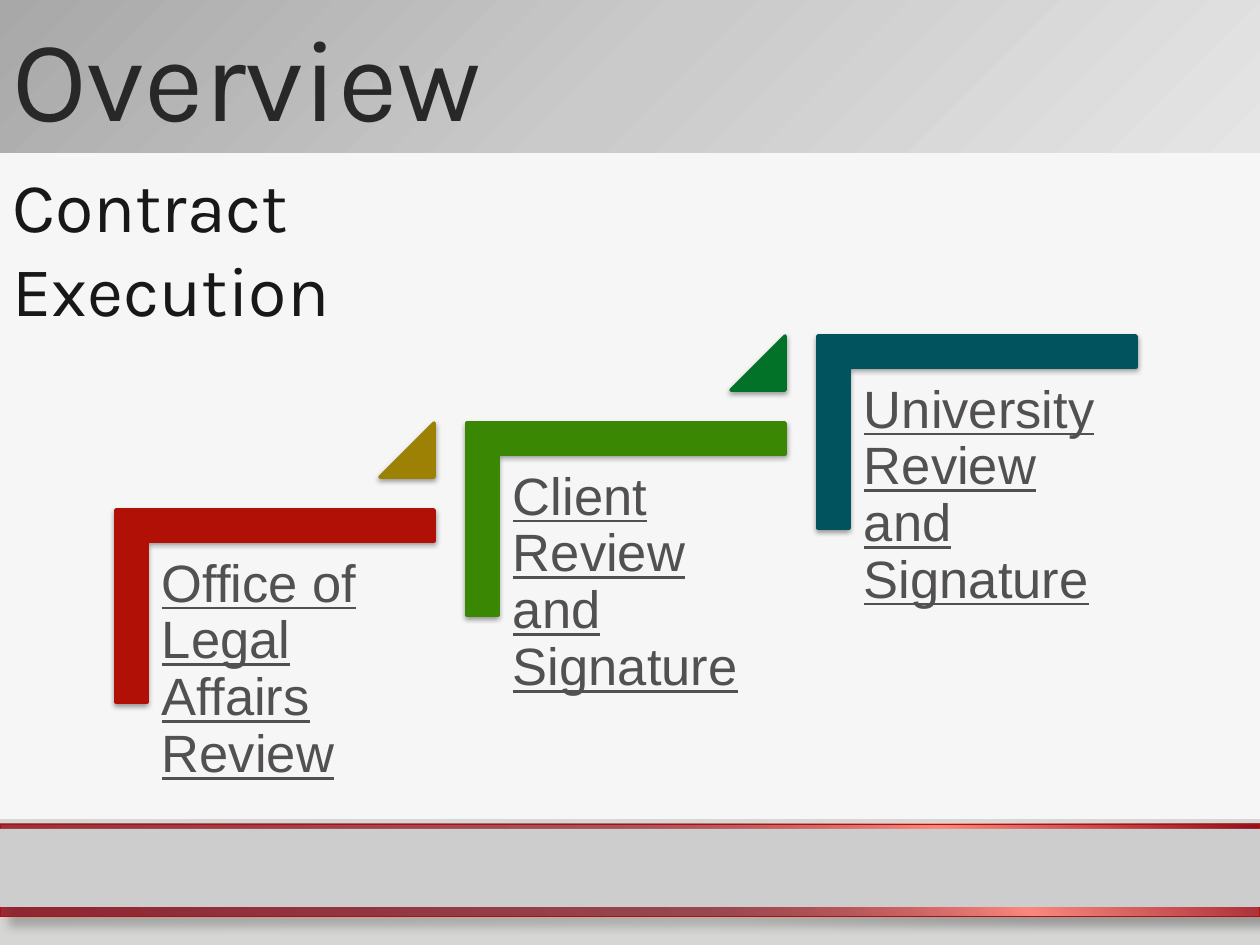
from lxml.etree import SubElement
from pptx import Presentation
from pptx.dml.color import RGBColor
from pptx.enum.shapes import MSO_SHAPE as Shape
from pptx.enum.text import MSO_ANCHOR as Anchor, PP_ALIGN as Align
from pptx.oxml.ns import qn
from pptx.util import Pt

EMU_PER_PX = 914400 / 126


def px(length):
    return round(length * EMU_PER_PX)


def color(hex_code):
    return RGBColor.from_string(hex_code)


def add_color(parent, hex_code, opacity=100):
    node = SubElement(parent, qn("a:srgbClr"), val=hex_code)
    if opacity < 100:
        SubElement(node, qn("a:alpha"), val=str(opacity * 1000))


def write(frame, text, font="Karla", size=40, ink="181818",
          underline=False, spacing=None, inset=None):
    frame.word_wrap = True
    frame.vertical_anchor = Anchor.TOP
    if inset is not None:
        frame.margin_left = frame.margin_right = px(inset)
        frame.margin_top = frame.margin_bottom = px(inset)
    paragraph = frame.paragraphs[0]
    paragraph.alignment = Align.LEFT
    if spacing:
        paragraph.line_spacing = spacing
    run = paragraph.add_run()
    run.text = text
    run.font.name = font
    run.font.size = Pt(size)
    run.font.underline = underline
    run.font.color.rgb = color(ink)


class Deck:
    background = "F6F6F6"
    step_shadow = (38, 3.1, 1.6, 90)
    step_text = dict(font="Arial", size=30, ink="525051",
                     underline=True, spacing=0.9, inset=15)

    def __init__(self, width, height):
        self.presentation = Presentation()
        self.presentation.slide_width = px(width)
        self.presentation.slide_height = px(height)
        self.slide = self.presentation.slides.add_slide(
            self.presentation.slide_layouts[6])
        fill = self.slide.background.fill
        fill.solid()
        fill.fore_color.rgb = color(self.background)

    def shape(self, preset, box, fill=None, opacity=100, line=None, width=2,
              adjustments=(), rotation=0, shadow=None):
        shape = self.slide.shapes.add_shape(preset, *map(px, box))
        shape.shadow.inherit = False
        shape.rotation = rotation
        for index, value in enumerate(adjustments):
            shape.adjustments[index] = value
        if fill:
            shape.fill.solid()
            shape.fill.fore_color.rgb = color(fill)
            if opacity < 100:
                tint = shape.fill._xPr.find(qn("a:solidFill"))[0]
                SubElement(tint, qn("a:alpha"), val=str(opacity * 1000))
        if line:
            shape.line.color.rgb = color(line)
            shape.line.width = Pt(width)
        else:
            shape.line.fill.background()
        if shadow:
            self.shadow(shape, *shadow)
        return shape

    def shadow(self, shape, opacity, blur, distance, angle):
        effects = shape._element.spPr.find(qn("a:effectLst"))
        outer = SubElement(effects, qn("a:outerShdw"), blurRad=str(Pt(blur)),
                           dist=str(Pt(distance)), dir=str(angle * 60000),
                           algn="ctr", rotWithShape="0")
        add_color(outer, "000000", opacity)

    def gradient(self, box, stops, angle, **style):
        band = self.shape(Shape.RECTANGLE, box, **style)
        band.fill.gradient()
        grad = band.fill._xPr.find(qn("a:gradFill"))
        for child in list(grad):
            grad.remove(child)
        stop_list = SubElement(grad, qn("a:gsLst"))
        for position, *tint in stops:
            stop = SubElement(stop_list, qn("a:gs"), pos=str(position * 1000))
            add_color(stop, *tint)
        SubElement(grad, qn("a:lin"), ang=str(angle * 60000), scaled="0")
        return band

    def text(self, box, words, **style):
        write(self.slide.shapes.add_textbox(*map(px, box)).text_frame,
              words, **style)

    def step(self, left, top, label, fill, arrow):
        look = dict(line=fill, shadow=self.step_shadow)
        self.shape(Shape.CORNER, (left + 32, top - 95, 192, 318), fill,
                   adjustments=(0.161, 0.161), rotation=90, **look)
        self.text((left, top, 287, 252), label, **self.step_text)
        if arrow:
            look["line"] = arrow
            self.shape(Shape.ISOSCELES_TRIANGLE,
                       (left + 233, top - 119, 54, 54), arrow,
                       adjustments=(1,), **look)

    def save(self):
        self.presentation.save("out.pptx")


def main():
    deck = Deck(1260, 945)
    deck.shape(Shape.RECTANGLE, (0, 819, 1260, 146), "9B9B9A", opacity=35)
    deck.gradient((0, 824, 1260, 92),
                  [(0, "8C0E1D", 84), (52, "8C0E1D", 64),
                   (76, "FB8880"), (100, "8C0E1D")], 312,
                  line="B11006", width=0.5, shadow=(28, 5.2, 7, 45))
    deck.shape(Shape.RECTANGLE, (0, 829, 1260, 78), "CDCDCD")

    header = deck.gradient((0, 0, 1260, 153),
                           [(0, "A9A8A9"), (50, "CACACA"), (100, "E5E5E5")], 45)
    write(header.text_frame, "Overview", size=66, ink="292828")
    deck.text((0, 156, 630, 136), "Contract Execution")

    steps = [
        ("Office of Legal Affairs Review", "B11006", "9C8104"),
        ("Client Review and Signature", "3A8703", "027229"),
        ("University Review and Signature", "01535D", None),
    ]
    for index, step in enumerate(steps):
        deck.step(147 + 351 * index, 542 - 87 * index, *step)
    deck.save()


if __name__ == "__main__":
    main()
